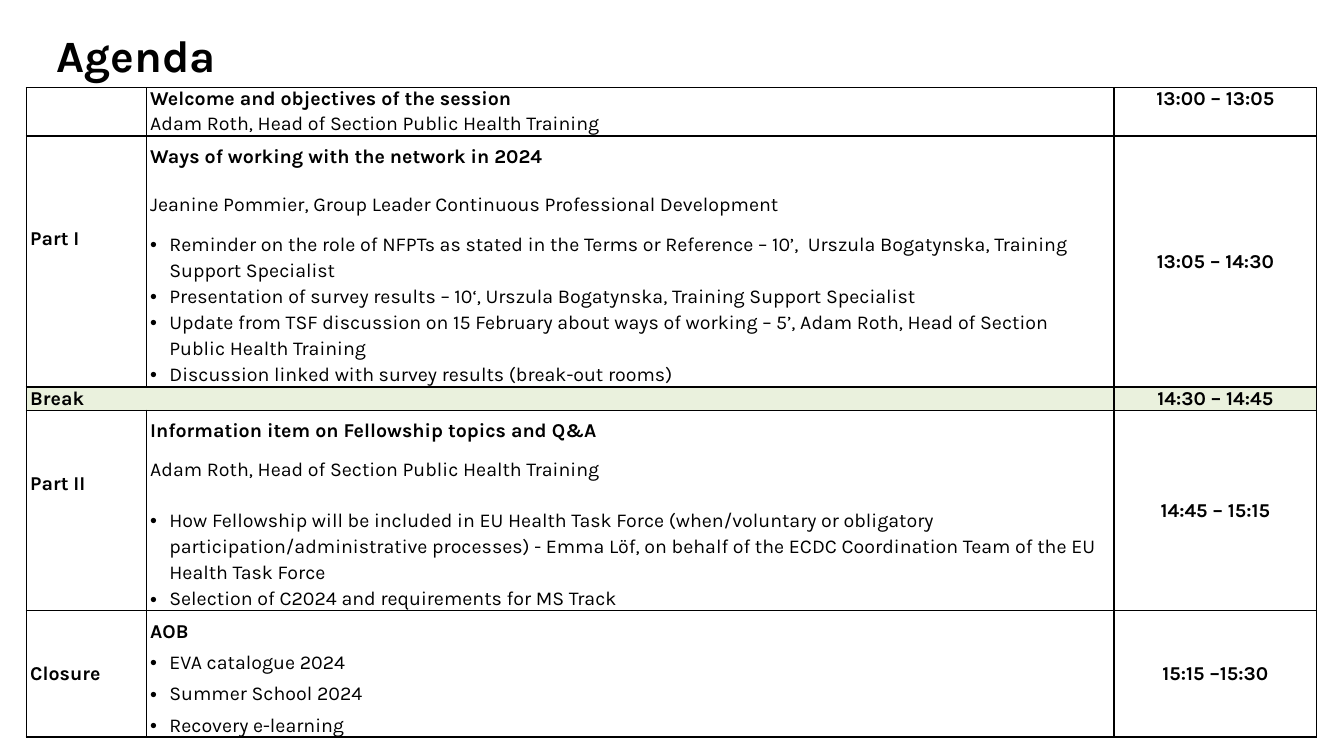
from lxml.etree import SubElement
from pptx import Presentation
from pptx.dml.color import RGBColor
from pptx.enum.text import MSO_ANCHOR as Anchor, PP_ALIGN as Align
from pptx.oxml.ns import qn
from pptx.util import Inches, Pt

COLORS = {"text": "000000", "border": "000000", "break": "EAF1DD"}
COLUMN_WIDTHS = [1.19, 9.6, 2.01]
EXACT = Pt(12)


def line(text, bold=False, bullet=False, spacing=EXACT, before=6, after=0):
    return dict(text=text, bold=bold, bullet=bullet, spacing=spacing, before=before, after=after)


def item(text, spacing=1.14, before=0):
    return line(text, bullet=True, spacing=spacing, before=before)


AGENDA = [
    dict(height=0.48, part="", time="13:00 – 13:05", anchor=Anchor.TOP, topics=[
        line("Welcome and objectives of the session", bold=True),
        line("Adam Roth, Head of Section Public Health Training"),
    ]),
    dict(height=2.49, part="Part I", lift=0.44, time="13:05 – 14:30", topics=[
        line("Ways of working with the network in 2024", bold=True, spacing=1.14, after=9.9),
        line("Jeanine Pommier, Group Leader Continuous Professional Development",
             spacing=1.14, after=9.9),
        item("Reminder on the role of NFPTs as stated in the Terms or Reference – 10’,  "
             "Urszula Bogatynska, Training Support Specialist"),
        item("Presentation of survey results – 10‘, Urszula Bogatynska, "
             "Training Support Specialist"),
        item("Update from TSF discussion on 15 February about ways of working – 5’, "
             "Adam Roth, Head of Section Public Health Training"),
        item("Discussion linked with survey results (break-out rooms)"),
    ]),
    dict(height=0.23, part="Break", time="14:30 – 14:45", topics=[]),
    dict(height=1.99, part="Part II", lift=0.52, time="14:45 – 15:15", topics=[
        line("Information item on Fellowship topics and Q&A", bold=True, spacing=1.14, after=9.9),
        line("Adam Roth, Head of Section Public Health Training", after=18),
        item("How Fellowship will be included in EU Health Task Force (when/voluntary or "
             "obligatory participation/administrative processes) - Emma Löf, on behalf of "
             "the ECDC Coordination Team of the EU Health Task Force"),
        item("Selection of C2024 and requirements for MS Track"),
    ]),
    dict(height=1.25, part="Closure", time="15:15 –15:30", topics=[
        line("AOB", bold=True, spacing=1.15),
        item("EVA catalogue 2024", spacing=1.0, before=6),
        item("Summer School 2024", spacing=1.0, before=6),
        item("Recovery e-learning", spacing=1.0, before=6),
    ]),
]


class AgendaSlide:
    """Holds the style and the current slide."""

    font = "Karla"
    size = 14

    def __init__(self, deck):
        self.slide = deck.slides.add_slide(deck.slide_layouts[5])

    def add_text(self, paragraph, text, size, bold):
        run = paragraph.add_run()
        run.text = text
        run.font.name = self.font
        run.font.size = Pt(size)
        run.font.bold = bold
        run.font.color.rgb = RGBColor.from_string(COLORS["text"])

    def add_title(self, text):
        heading = self.slide.shapes.title
        heading.left, heading.top = Inches(0.46), Inches(0.06)
        heading.width, heading.height = Inches(11.32), Inches(1.04)
        heading.text_frame.word_wrap = True
        heading.text_frame.vertical_anchor = Anchor.MIDDLE
        paragraph = heading.text_frame.paragraphs[0]
        paragraph.alignment = Align.LEFT
        paragraph.line_spacing = 0.9
        self.add_text(paragraph, text, 32, True)

    def add_bullet(self, paragraph):
        properties = paragraph._p.get_or_add_pPr()
        properties.set("marL", str(Inches(0.19)))
        properties.set("indent", str(-Inches(0.19)))
        SubElement(properties, qn("a:buFont"), typeface="Arial")
        SubElement(properties, qn("a:buChar"), char="•")

    def frame_cell(self, cell, fill):
        properties = cell._tc.get_or_add_tcPr()
        for side in ("lnL", "lnR", "lnT", "lnB"):
            border = SubElement(properties, qn(f"a:{side}"), w=str(Pt(1)))
            solid = SubElement(border, qn("a:solidFill"))
            SubElement(solid, qn("a:srgbClr"), val=COLORS["border"])
        if fill:
            cell.fill.solid()
            cell.fill.fore_color.rgb = RGBColor.from_string(fill)
        else:
            cell.fill.background()

    def fill_cell(self, cell, lines, anchor=Anchor.MIDDLE, align=Align.LEFT, lift=0):
        cell.margin_left = cell.margin_right = Inches(0.04)
        cell.margin_top, cell.margin_bottom = Inches(0.06), Inches(lift)
        cell.vertical_anchor = anchor
        content = cell.text_frame
        for index, entry in enumerate(lines):
            paragraph = content.add_paragraph() if index else content.paragraphs[0]
            if entry["bullet"]:
                self.add_bullet(paragraph)
            paragraph.alignment = align
            paragraph.line_spacing = entry["spacing"]
            paragraph.space_before = Pt(entry["before"] if index else 0)
            paragraph.space_after = Pt(entry["after"])
            self.add_text(paragraph, entry["text"], self.size, entry["bold"])

    def add_agenda(self, sessions):
        height = sum(session["height"] for session in sessions)
        schedule = self.slide.shapes.add_table(
            len(sessions), len(COLUMN_WIDTHS), Inches(0.26), Inches(0.87),
            Inches(sum(COLUMN_WIDTHS)), Inches(height)).table
        schedule.first_row = schedule.horz_banding = False
        for column, width in zip(schedule.columns, COLUMN_WIDTHS):
            column.width = Inches(width)
        for index, session in enumerate(sessions):
            schedule.rows[index].height = Inches(session["height"])
            part, topics, time = (schedule.cell(index, column) for column in range(3))
            is_break = not session["topics"]
            for cell in (part, topics, time):
                self.frame_cell(cell, COLORS["break"] if is_break else None)
            if is_break:
                part.merge(topics)
            label = [line(session["part"], bold=True)] if session["part"] else []
            self.fill_cell(part, label, lift=session.get("lift", 0))
            self.fill_cell(topics, session["topics"], anchor=Anchor.TOP)
            self.fill_cell(time, [line(session["time"], bold=True)],
                           anchor=session.get("anchor", Anchor.MIDDLE), align=Align.CENTER)


def main():
    deck = Presentation()
    deck.slide_width, deck.slide_height = Inches(13.33), Inches(7.5)
    slide = AgendaSlide(deck)
    slide.add_agenda(AGENDA)
    slide.add_title("Agenda")
    deck.save("out.pptx")


if __name__ == "__main__":
    main()
